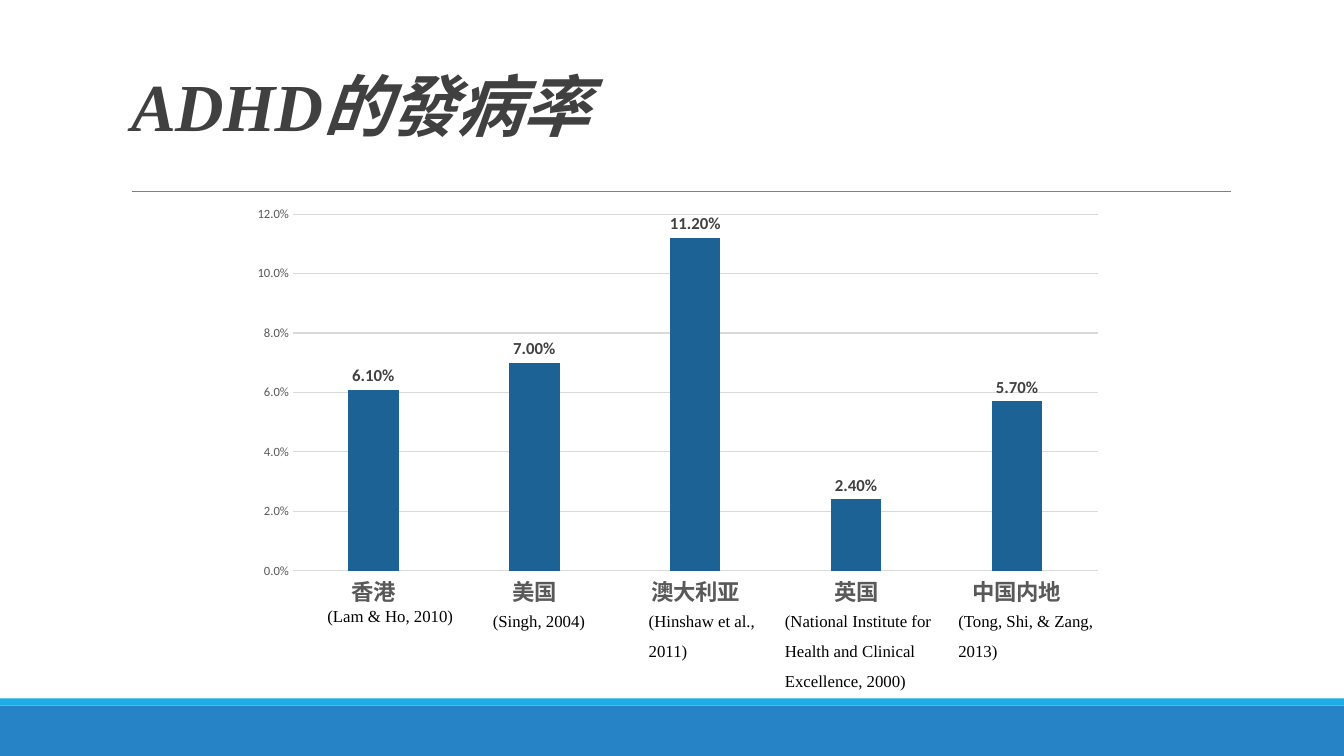
"""Build a slide that charts the prevalence of ADHD by region."""
import dataclasses

import lxml.etree
import pptx
import pptx.chart.data
import pptx.dml.color
import pptx.enum.chart
import pptx.enum.shapes
import pptx.enum.text
import pptx.oxml.ns
import pptx.util

Cm = pptx.util.Cm


@dataclasses.dataclass(frozen=True)
class Theme:
    """Hold the colours, fonts and type sizes."""
    band: str = "2683C6"
    stripe: str = "1CADE4"
    rule: str = "808080"
    heading: str = "404040"
    axis: str = "595959"
    grid: str = "D9D9D9"
    bar: str = "1D6294"
    black: str = "000000"
    serif: str = "Times New Roman"
    sans: str = "Calibri"
    title_size: int = 48
    category_size: int = 16
    citation_size: int = 12
    label_size: int = 12
    chart_size: int = 10
    scale_size: int = 9


THEME = Theme()

RATES = {"香港": 0.061, "美国": 0.07, "澳大利亚": 0.112, "英国": 0.024, "中国内地": 0.057}

CITATIONS = [
    ("(Singh, 2004)", (10.9, 14.76, 4.14, 1.27),
     {"line_spacing": 2, "indent": 1.27, "wrap": False}),
    ("(Lam & Ho, 2010)", (8, 15.14, 3.84, 0.76), {"wrap": False}),
    ("(Hinshaw et al., 2011)", (14.83, 15.01, 4.6, 1.8),
     {"line_spacing": 1.5, "indent": 1.27}),
    ("(National Institute for Health and Clinical Excellence, 2000)",
     (19.53, 15.01, 4.83, 2.57), {"line_spacing": 1.5}),
    ("(Tong, Shi, & Zang, 2013)", (23.9, 15.01, 4.39, 1.8), {"line_spacing": 1.5}),
]


def rgb(colour):
    """Turn a hex string into a colour."""
    return pptx.dml.color.RGBColor.from_string(colour)


def style_font(font, size, colour, name, bold=False, italic=False):
    """Set the look of a font."""
    font.size = pptx.util.Pt(size)
    font.name = name
    font.bold = bold
    font.italic = italic
    font.color.rgb = rgb(colour)


def write_text(frame, text, *, size, colour, line_spacing=1, indent=0, tracking=0,
               wrap=True, bold=False, italic=False):
    """Write one left-aligned paragraph with its format."""
    frame.word_wrap = wrap
    paragraph = frame.paragraphs[0]
    paragraph.alignment = pptx.enum.text.PP_ALIGN.LEFT
    paragraph.line_spacing = line_spacing
    run = paragraph.add_run()
    run.text = text
    style_font(run.font, size, colour, THEME.serif, bold, italic)
    if indent:
        properties = paragraph._p.get_or_add_pPr()
        properties.set("marL", str(Cm(indent)))
        properties.set("indent", "0")
    if tracking:
        run._r.get_or_add_rPr().set("spc", str(round(tracking * 100)))


def add_band(slide, top, height, colour):
    """Add a full-width colour band."""
    band = slide.shapes.add_shape(pptx.enum.shapes.MSO_SHAPE.RECTANGLE,
                                  0, Cm(top), Cm(33.87), Cm(height))
    band.shadow.inherit = False
    band.fill.solid()
    band.fill.fore_color.rgb = rgb(colour)
    band.line.fill.background()


def add_rule(slide, left, right, top):
    """Add the thin line below the title."""
    rule = slide.shapes.add_connector(pptx.enum.shapes.MSO_CONNECTOR.STRAIGHT,
                                      Cm(left), Cm(top), Cm(right), Cm(top))
    rule.line.color.rgb = rgb(THEME.rule)
    rule.line.width = pptx.util.Pt(0.5)
    lxml.etree.SubElement(rule._element.spPr, pptx.oxml.ns.qn("a:effectLst"))


def set_title(slide, text):
    """Move and fill the title placeholder."""
    title = slide.shapes.title
    title.left, title.top, title.width, title.height = map(Cm, (3.05, 0.79, 27.94, 4.03))
    frame = title.text_frame
    frame.auto_size = pptx.enum.text.MSO_AUTO_SIZE.NONE
    frame.vertical_anchor = pptx.enum.text.MSO_ANCHOR.MIDDLE
    write_text(frame, text, size=THEME.title_size, colour=THEME.heading,
               line_spacing=0.85, tracking=-0.5, bold=True, italic=True)


def add_citation(slide, text, box, layout):
    """Add the citation below a category."""
    frame = slide.shapes.add_textbox(*map(Cm, box)).text_frame
    frame.auto_size = pptx.enum.text.MSO_AUTO_SIZE.SHAPE_TO_FIT_TEXT
    write_text(frame, text, size=THEME.citation_size, colour=THEME.black, **layout)


def style_grey_line(line):
    """Give an axis or grid line its look."""
    line.color.rgb = rgb(THEME.grid)
    line.width = pptx.util.Pt(0.75)


def style_axes(chart):
    """Format the region axis and the rate axis."""
    regions, rates = chart.category_axis, chart.value_axis
    for axis in (regions, rates):
        axis.major_tick_mark = pptx.enum.chart.XL_TICK_MARK.NONE
        axis.minor_tick_mark = pptx.enum.chart.XL_TICK_MARK.NONE
    style_font(regions.tick_labels.font, THEME.category_size, THEME.axis, THEME.sans, True)
    style_grey_line(regions.format.line)
    style_font(rates.tick_labels.font, THEME.scale_size, THEME.axis, THEME.sans)
    rates.tick_labels.number_format = "0.0%"
    rates.tick_labels.number_format_is_linked = False
    rates.minimum_scale, rates.maximum_scale, rates.major_unit = 0, 0.12, 0.02
    rates.format.line.fill.background()
    style_grey_line(rates.major_gridlines.format.line)


def add_rate_chart(slide):
    """Add the column chart of rates."""
    data = pptx.chart.data.CategoryChartData(number_format="0.00%")
    data.categories = list(RATES)
    data.add_series("Series 1", list(RATES.values()))
    chart = slide.shapes.add_chart(pptx.enum.chart.XL_CHART_TYPE.COLUMN_CLUSTERED,
                                   *map(Cm, (6.05, 5, 22.05, 10.49)), data).chart
    chart.has_title = False
    chart.has_legend = False
    style_font(chart.font, THEME.chart_size, THEME.black, THEME.sans)
    style_axes(chart)
    plot = chart.plots[0]
    plot.vary_by_categories = False
    plot.gap_width = 219
    plot.overlap = -27
    bars = plot.series[0].format.fill
    bars.solid()
    bars.fore_color.rgb = rgb(THEME.bar)
    plot.has_data_labels = True
    labels = plot.data_labels
    labels.show_value = True
    labels.number_format = "0.00%"
    labels.number_format_is_linked = False
    labels.position = pptx.enum.chart.XL_LABEL_POSITION.OUTSIDE_END
    style_font(labels.font, THEME.label_size, THEME.heading, THEME.sans, True)


def main():
    """Build and save the slide."""
    deck = pptx.Presentation()
    deck.slide_width, deck.slide_height = Cm(33.87), Cm(19.05)
    slide = deck.slides.add_slide(deck.slide_layouts[5])
    add_band(slide, 17.78, 1.27, THEME.band)
    add_band(slide, 17.6, 0.18, THEME.stripe)
    add_rule(slide, 3.33, 31.01, 4.82)
    set_title(slide, "ADHD的發病率")
    for text, box, layout in CITATIONS:
        add_citation(slide, text, box, layout)
    add_rate_chart(slide)
    deck.save("out.pptx")


if __name__ == "__main__":
    main()
